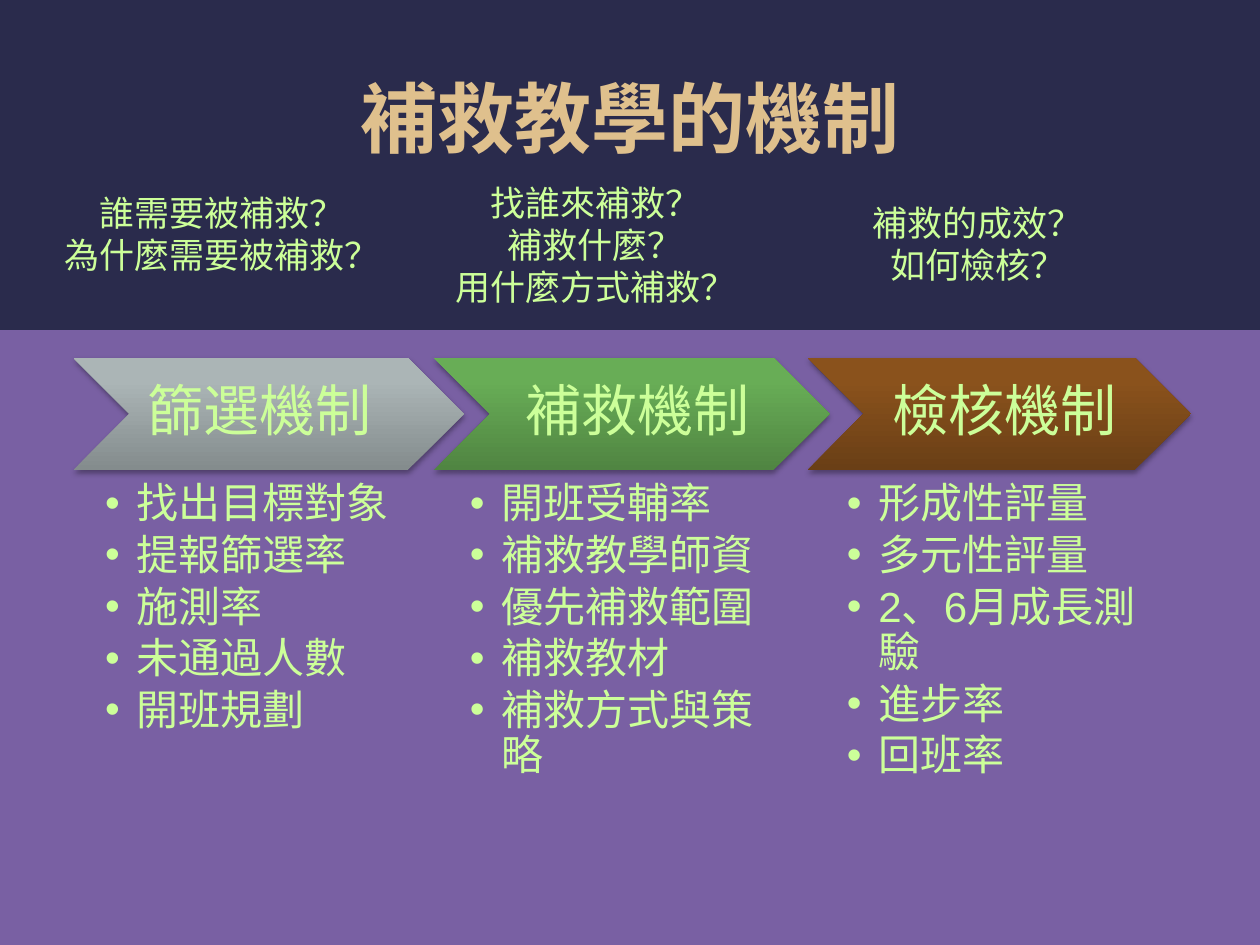
from lxml import etree
from pptx import Presentation
from pptx.dml.color import RGBColor
from pptx.enum.shapes import MSO_SHAPE
from pptx.enum.text import MSO_ANCHOR, MSO_AUTO_SIZE, PP_ALIGN
from pptx.oxml import parse_xml
from pptx.oxml.ns import qn
from pptx.util import Pt

NAMESPACE = "http://schemas.openxmlformats.org/drawingml/2006/main"
TEXT_GREEN = "CCFF99"
CJK_FONT = "Noto Sans CJK SC"
LINE_HEIGHT = 24

QUESTIONS = [
    ((19.5, 106, 215), ["誰需要被補救？", "為什麼需要被補救？"]),
    ((224, 100, 232.5), ["找誰來補救？", "補救什麼？", "用什麼方式補救？"]),
    ((468, 111.5, 181.5), ["補救的成效？", "如何檢核？"]),
]

STAGES = [
    ("篩選機制", PP_ALIGN.LEFT, (42, 204.5, 223, 64), ("848C8D", "ABB5B6", "ACB6B8"),
     (60, 275.8, 183, 254),
     ["找出目標對象", "提報篩選率", "施測率", "未通過人數", "開班規劃"]),
    ("補救機制", PP_ALIGN.CENTER, (248, 204.5, 226, 64), ("508542", "68AD56", "67B055"),
     (268.5, 275.8, 184.3, 254),
     ["開班受輔率", "補救教學師資", "優先補救範圍", "補救教材", "補救方式與策略"]),
    ("檢核機制", PP_ALIGN.CENTER, (461.5, 204.5, 219, 64), ("6A3F16", "8A521C", "8C531A"),
     (484, 275.8, 186.5, 254),
     ["形成性評量", "多元性評量", "2、6月成長測驗", "進步率", "回班率"]),
]


def colour(value):
    return RGBColor.from_string(value)


def place(shape, box):
    shape.left, shape.top, shape.width, shape.height = map(Pt, box)


def set_margins(text_frame, left, top, right, bottom):
    text_frame.margin_left, text_frame.margin_top = Pt(left), Pt(top)
    text_frame.margin_right, text_frame.margin_bottom = Pt(right), Pt(bottom)


def format_runs(paragraph, size, font_name, value, bold=False):
    for run in paragraph.runs:
        run.font.size = Pt(size)
        run.font.name = font_name
        run.font.bold = bold
        run.font.color.rgb = colour(value)
        if font_name == CJK_FONT:
            latin = run.font._element.find(qn("a:latin"))
            east_asian = etree.Element(qn("a:ea"), typeface=font_name)
            latin.addnext(east_asian)


def add_panel(slide, box):
    panel = slide.shapes.add_shape(MSO_SHAPE.RECTANGLE, *map(Pt, box))
    panel.shadow.inherit = False
    panel.line.fill.background()
    panel.fill.solid()
    panel.fill.fore_color.rgb = colour("CC99FF")
    fill_colour = panel.element.spPr.find(".//" + qn("a:srgbClr"))
    etree.SubElement(fill_colour, qn("a:alpha"), val="49000")
    panel.element.getparent().insert(2, panel.element)


def fill_title(title, box):
    place(title, box)
    text_frame = title.text_frame
    text_frame.text = "補救教學的機制"
    text_frame.auto_size = MSO_AUTO_SIZE.NONE
    text_frame.vertical_anchor = MSO_ANCHOR.MIDDLE
    text_frame.paragraphs[0].alignment = PP_ALIGN.CENTER
    format_runs(text_frame.paragraphs[0], 44, "Arial", "DFC08D", True)


def add_questions(slide, position, lines):
    left, top, width = position
    box = (left, top, width, LINE_HEIGHT * len(lines) + 7.2)
    text_frame = slide.shapes.add_textbox(*map(Pt, box)).text_frame
    text_frame.word_wrap = True
    text_frame.text = "\n".join(lines)
    for paragraph in text_frame.paragraphs:
        paragraph.alignment = PP_ALIGN.CENTER
        paragraph.line_spacing = Pt(LINE_HEIGHT)
        format_runs(paragraph, 20, CJK_FONT, TEXT_GREEN)


def style_chevron(chevron, stops):
    chevron.line.fill.background()
    stop_xml = "".join(
        f'<a:gs pos="{position}"><a:srgbClr val="{colour(value)}"/></a:gs>'
        for position, value in zip((0, 80000, 100000), stops))
    gradient = parse_xml(
        f'<a:gradFill xmlns:a="{NAMESPACE}" rotWithShape="1"><a:gsLst>{stop_xml}</a:gsLst>'
        '<a:lin ang="16200000" scaled="0"/></a:gradFill>')
    shadow = parse_xml(
        f'<a:effectLst xmlns:a="{NAMESPACE}"><a:outerShdw blurRad="{Pt(3.1)}" '
        f'dist="{Pt(1.8)}" dir="5400000" rotWithShape="0">'
        f'<a:srgbClr val="{colour("000000")}"><a:alpha val="35000"/></a:srgbClr>'
        '</a:outerShdw></a:effectLst>')
    properties = chevron.element.spPr
    properties.find(qn("a:prstGeom")).addnext(gradient)
    properties.find(qn("a:ln")).addnext(shadow)


def add_stage_heading(slide, box, heading, alignment, stops):
    left, top, width, height = box
    chevron = slide.shapes.add_shape(MSO_SHAPE.CHEVRON, *map(Pt, box))
    style_chevron(chevron, stops)
    label_box = (left + height / 2, top, width - height, height)
    text_frame = slide.shapes.add_textbox(*map(Pt, label_box)).text_frame
    text_frame.word_wrap = True
    text_frame.vertical_anchor = MSO_ANCHOR.MIDDLE
    set_margins(text_frame, 10, 3.6, 3.6, 3.6)
    text_frame.text = heading
    paragraph = text_frame.paragraphs[0]
    paragraph.alignment = alignment
    paragraph.line_spacing = 0.9
    format_runs(paragraph, 32, CJK_FONT, TEXT_GREEN)


def fill_list(body, box, items):
    place(body, box)
    text_frame = body.text_frame
    text_frame.text = "\n".join(items)
    text_frame.auto_size = MSO_AUTO_SIZE.NONE
    text_frame.vertical_anchor = MSO_ANCHOR.TOP
    set_margins(text_frame, 0, 0, 0, 0)
    for paragraph in text_frame.paragraphs:
        paragraph.level = 1
        paragraph.alignment = PP_ALIGN.LEFT
        paragraph.line_spacing = 0.9
        paragraph.space_before = Pt(0)
        paragraph.space_after = Pt(3.6)
        properties = paragraph._p.get_or_add_pPr()
        properties.set("marL", str(Pt(18)))
        properties.set("indent", str(-Pt(18)))
        etree.SubElement(properties, qn("a:buFont"), typeface="Arial")
        etree.SubElement(properties, qn("a:buChar"), char="•")
        format_runs(paragraph, 24, "Arial", TEXT_GREEN)


def build_slide(presentation):
    slide = presentation.slides.add_slide(presentation.slide_layouts[4])
    slide.background.fill.solid()
    slide.background.fill.fore_color.rgb = colour("2A2B4C")
    title, *bodies, spare = slide.placeholders
    spare.element.getparent().remove(spare.element)
    add_panel(slide, (0, 188.6, 720, 351.4))
    fill_title(title, (36, 21.6, 648, 90))
    for position, lines in QUESTIONS:
        add_questions(slide, position, lines)
    for body, stage in zip(bodies, STAGES):
        heading, alignment, chevron_box, stops, list_box, items = stage
        add_stage_heading(slide, chevron_box, heading, alignment, stops)
        fill_list(body, list_box, items)


def main():
    presentation = Presentation()
    presentation.slide_width, presentation.slide_height = Pt(720), Pt(540)
    build_slide(presentation)
    presentation.save("out.pptx")


if __name__ == "__main__":
    main()
